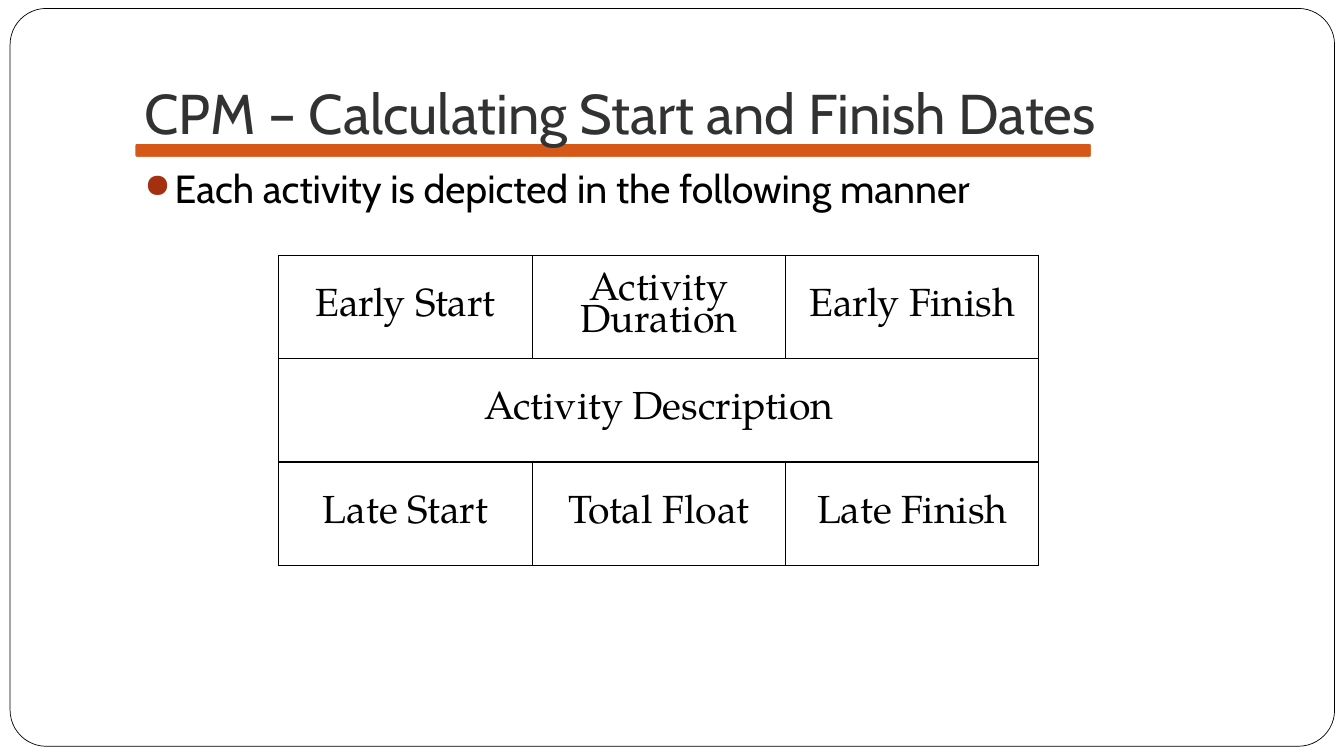
from typing import NamedTuple

from lxml.etree import SubElement
from pptx import Presentation
from pptx.dml.color import RGBColor
from pptx.enum.shapes import MSO_SHAPE as Preset
from pptx.enum.text import MSO_ANCHOR as Anchor, PP_ALIGN as Align
from pptx.oxml.ns import qn
from pptx.util import Emu, Inches, Pt

WIDTH, HEIGHT = Inches(13.33), Inches(7.5)
COLUMN, ROW = WIDTH / 40, HEIGHT / 90  # layout grid
SANS, SERIF = "Cabin", "TeX Gyre Pagella"
BLACK, WHITE = "000000", "FFFFFF"


class Box(NamedTuple):
    """A rectangle in grid columns and rows."""
    left: float
    top: float
    width: float
    height: float

    def lengths(self) -> list[Emu]:
        units = (COLUMN, ROW, COLUMN, ROW)
        return [Emu(round(size * unit)) for size, unit in zip(self, units)]


class Panel(NamedTuple):
    box: Box
    rounding: float
    fill: str
    line: str
    weight: float


class Label(NamedTuple):
    box: Box
    text: str
    size: float
    color: str
    anchor: Anchor
    bottom_inset: float


PANELS = [
    Panel(Box(0.3, 1, 39.42, 87.84), 0.049, WHITE, BLACK, 0.5),  # frame
    Panel(Box(4, 17, 28.5, 1.8), 0.167, "D55816", WHITE, 1.5),  # title rule
]
TITLE = Label(Box(4, 3.6, 34, 15), "CPM – Calculating Start and Finish Dates",
              40, "323232", Anchor.BOTTOM, 0.1)
BODY = Label(Box(4, 19, 34, 60), "Each activity is depicted in the following manner",
             28, BLACK, Anchor.TOP, 0.05)
TABLE_BOX = Box(8.3, 30.4, 22.62, 36.9)
ACTIVITY_ROWS = [
    ["Early Start", "Activity Duration", "Early Finish"],
    ["Activity Description"],
    ["Late Start", "Total Float", "Late Finish"],
]


def rgb(color: str) -> RGBColor:
    return RGBColor.from_string(color)


def style_paragraph(paragraph, name: str, size: float, color: str) -> None:
    paragraph.font.name = name
    paragraph.font.size = Pt(size)
    paragraph.font.color.rgb = rgb(color)


def add_panel(slide, panel: Panel) -> None:
    shape = slide.shapes.add_shape(Preset.ROUNDED_RECTANGLE, *panel.box.lengths())
    shape.adjustments[0] = panel.rounding
    shape.shadow.inherit = False
    shape.fill.solid()
    shape.fill.fore_color.rgb = rgb(panel.fill)
    shape.line.color.rgb = rgb(panel.line)
    shape.line.width = Pt(panel.weight)


def add_label(slide, label: Label):
    frame = slide.shapes.add_textbox(*label.box.lengths()).text_frame
    frame.word_wrap = True
    frame.vertical_anchor = label.anchor
    frame.margin_bottom = Inches(label.bottom_inset)
    paragraph = frame.paragraphs[0]
    paragraph.text = label.text
    style_paragraph(paragraph, SANS, label.size, label.color)
    return paragraph


def add_bullet(paragraph, color: str) -> None:
    paragraph.space_before = Pt(5.8)
    properties = paragraph._p.get_or_add_pPr()
    indent = Inches(0.3)
    properties.set("marL", str(indent))
    properties.set("indent", str(-indent))
    bullet_color = SubElement(properties, qn("a:buClr"))
    SubElement(bullet_color, qn("a:srgbClr"), val=color)
    SubElement(properties, qn("a:buSzPct"), val="85000")
    SubElement(properties, qn("a:buChar"), char="●")


def add_borders(cell, color: str, weight: float) -> None:
    properties = cell._tc.get_or_add_tcPr()
    for position, side in enumerate(("a:lnL", "a:lnR", "a:lnT", "a:lnB")):
        line = SubElement(properties, qn(side), w=str(Pt(weight)))
        properties.insert(position, line)  # borders come before the fill
        fill = SubElement(line, qn("a:solidFill"))
        SubElement(fill, qn("a:srgbClr"), val=color)


def add_activity_table(slide, box: Box, rows: list[list[str]]) -> None:
    column_count = max(map(len, rows))
    table = slide.shapes.add_table(len(rows), column_count, *box.lengths()).table
    table.first_row = table.horz_banding = False
    for cell in table.iter_cells():
        cell.fill.background()
        add_borders(cell, BLACK, 1)
    for row, texts in enumerate(rows):
        if len(texts) == 1:
            table.cell(row, 0).merge(table.cell(row, column_count - 1))
        for column, text in enumerate(texts):
            cell = table.cell(row, column)
            cell.vertical_anchor = Anchor.MIDDLE
            paragraph = cell.text_frame.paragraphs[0]
            paragraph.text = text
            paragraph.alignment = Align.CENTER
            paragraph.line_spacing = 0.8
            style_paragraph(paragraph, SERIF, 28, BLACK)


def main() -> None:
    presentation = Presentation()
    presentation.slide_width, presentation.slide_height = WIDTH, HEIGHT
    slide = presentation.slides.add_slide(presentation.slide_layouts[6])

    # Frame and title rule
    for panel in PANELS:
        add_panel(slide, panel)

    # Title and bullet
    add_label(slide, TITLE)
    add_bullet(add_label(slide, BODY), "A5300F")

    # Activity box
    add_activity_table(slide, TABLE_BOX, ACTIVITY_ROWS)
    presentation.save("out.pptx")


if __name__ == "__main__":
    main()
